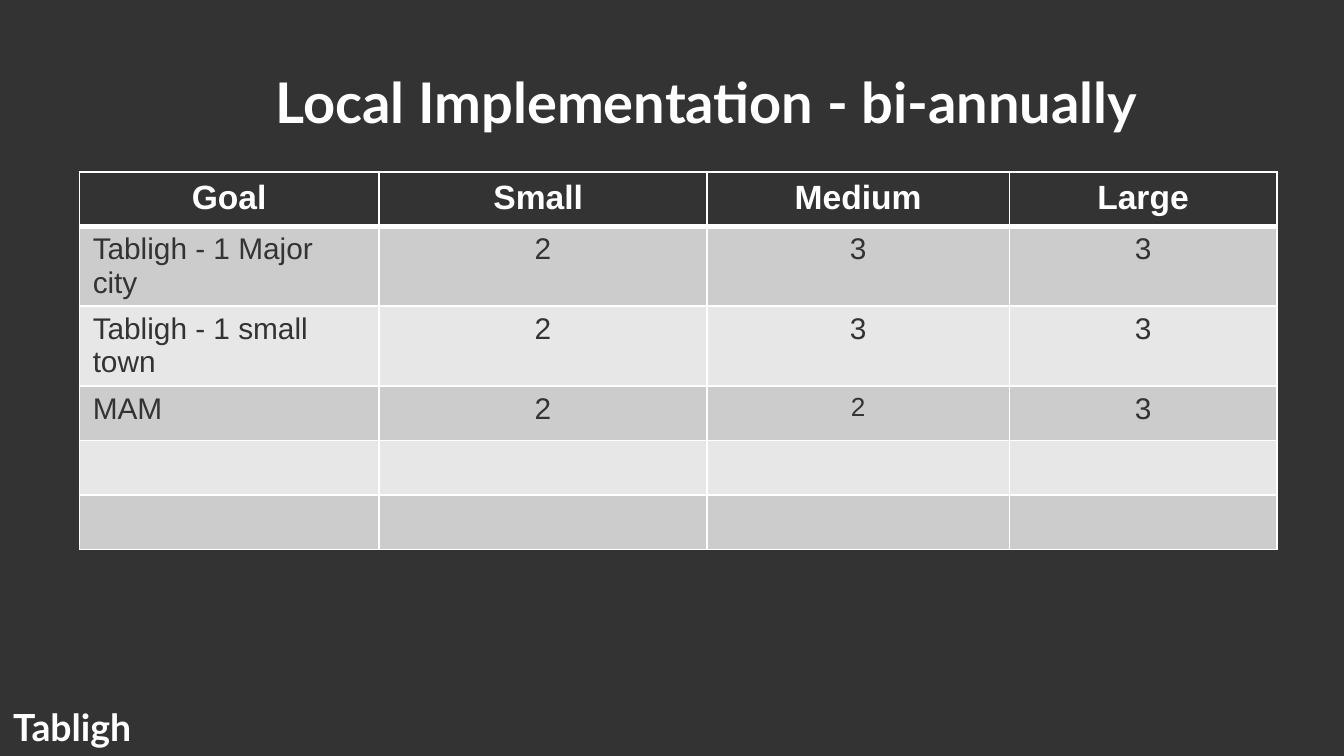
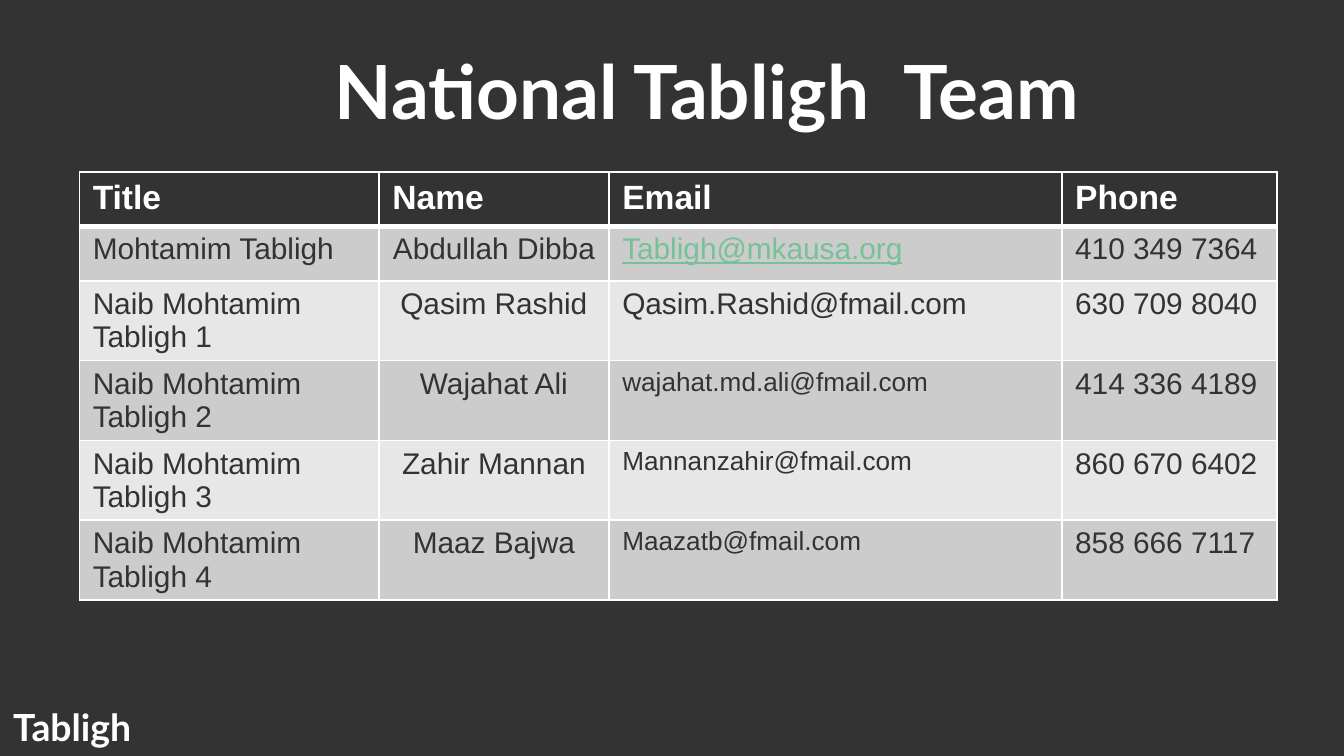
from lxml.etree import SubElement
from pptx import Presentation
from pptx.dml.color import RGBColor
from pptx.enum.text import MSO_ANCHOR, MSO_AUTO_SIZE, PP_ALIGN
from pptx.oxml.ns import qn
from pptx.util import Inches, Pt

COLORS = {
    "dark": "333333",
    "white": "FFFFFF",
    "band_odd": "CCCCCC",
    "band_even": "E7E7E7",
    "link": "77C197",
}
HEAD_FONT, BODY_FONT = "Lato", "Arial"
SLIDE_W = Inches(10)
SLIDE_H = SLIDE_W * 9 // 16
LEFT, CENTER = PP_ALIGN.LEFT, PP_ALIGN.CENTER

# Boxes as left, top, width, height in percent of the slide
TITLE_BOX = (16, 1.8, 73.2, 16.9)
FOOTER_BOX = (0, 91.5, 23.5, 8.5)
TABLE_BOX = (5.9, 22.75, 89.1, 43.2)

GOALS = [
    ["Goal", "Small ", "Medium", "Large"],
    ["Tabligh - 1 Major city", "2", "3", "3"],
    ["Tabligh - 1 small town", "2", "3", "3"],
    ["MAM", "2", "2", "3"],
    [""] * 4,
    [""] * 4,
]
TEAM = [
    ["Title", "Name", "Email", "Phone"],
    ["Mohtamim Tabligh", "Abdullah Dibba ", "Tabligh@mkausa.org", "410 349 7364"],
    ["Naib Mohtamim Tabligh 1", "Qasim Rashid", "Qasim.Rashid@fmail.com", "630 709 8040"],
    ["Naib Mohtamim Tabligh 2", "Wajahat Ali", "wajahat.md.ali@fmail.com", "414 336 4189"],
    ["Naib Mohtamim Tabligh 3", "Zahir Mannan", "Mannanzahir@fmail.com", "860 670 6402"],
    ["Naib Mohtamim Tabligh 4", "Maaz Bajwa", "Maazatb@fmail.com", "858 666 7117"],
]


def rgb(name):
    return RGBColor.from_string(COLORS[name])


def to_emu(box):
    sides = (SLIDE_W, SLIDE_H, SLIDE_W, SLIDE_H)
    return [round(share * side / 100) for share, side in zip(box, sides)]


def style_runs(p, size, color, font, bold=False):
    for r in p.runs:
        r.font.name, r.font.size, r.font.bold = font, Pt(size), bold
        r.font.color.rgb = rgb(color)


def write_heading(sp, text, size, align):
    """Bold white text resting on the bottom of its box."""
    tf = sp.text_frame
    tf.text = text
    tf.word_wrap = True
    tf.auto_size = MSO_AUTO_SIZE.NONE
    tf.vertical_anchor = MSO_ANCHOR.BOTTOM
    tf.paragraphs[0].alignment = align
    style_runs(tf.paragraphs[0], size, "white", HEAD_FONT, True)


def add_base_slide(prs, title, title_size):
    s = prs.slides.add_slide(prs.slide_layouts[5])
    sp = s.shapes.title
    sp.left, sp.top, sp.width, sp.height = to_emu(TITLE_BOX)
    write_heading(sp, title, title_size, CENTER)
    write_heading(s.shapes.add_textbox(*to_emu(FOOTER_BOX)), "Tabligh", 20, LEFT)
    return s


def set_borders(cell, top, bottom):
    tc_pr = cell._tc.get_or_add_tcPr()
    for side, width in (("L", 1), ("R", 1), ("T", top), ("B", bottom)):
        ln = SubElement(tc_pr, qn(f"a:ln{side}"), w=str(Pt(width)))
        fill = SubElement(ln, qn("a:solidFill"))
        SubElement(fill, qn("a:srgbClr"), val=COLORS["white"])


def add_banded_table(s, box, rows, col_widths, head_aligns, body_aligns, small_cells):
    x, y, w, h = to_emu(box)
    table = s.shapes.add_table(len(rows), len(col_widths), x, y, w, h).table
    for col, width in zip(table.columns, col_widths):
        col.width = round(w * width / sum(col_widths))

    for i, row in enumerate(rows):
        head = i == 0
        aligns = head_aligns if head else body_aligns
        band = "dark" if head else "band_odd" if i % 2 else "band_even"
        for j, text in enumerate(row):
            cell = table.cell(i, j)
            set_borders(cell, 3 if i == 1 else 1, 3 if head else 1)
            cell.fill.solid()
            cell.fill.fore_color.rgb = rgb(band)
            cell.text_frame.text = text
            p = cell.text_frame.paragraphs[0]
            p.alignment = aligns[j]
            size = 18 if head else 14 if (i, j) in small_cells else 16
            style_runs(p, size, "white" if head else "dark", BODY_FONT, head)
    return table


def add_goals_slide(prs):
    s = add_base_slide(prs, "Local Implementation - bi-annually", 30)
    add_banded_table(s, TABLE_BOX, GOALS, (2.23, 2.44, 2.25, 1.99),
                     [CENTER] * 4, [LEFT] + [CENTER] * 3, {(3, 2)})


def add_team_slide(prs):
    s = add_base_slide(prs, "National Tabligh  Team", 40)
    table = add_banded_table(s, TABLE_BOX, TEAM, (2.23, 1.71, 3.37, 1.6),
                             [LEFT] * 4, [LEFT, CENTER, LEFT, LEFT],
                             {(3, 2), (4, 2), (5, 2)})
    # The team's shared address looks like a link
    r = table.cell(1, 2).text_frame.paragraphs[0].runs[0]
    r.font.color.rgb = rgb("link")
    r.font.underline = True


def main():
    prs = Presentation()
    prs.slide_width, prs.slide_height = SLIDE_W, SLIDE_H
    background = prs.slide_master.background.fill
    background.solid()
    background.fore_color.rgb = rgb("dark")
    add_goals_slide(prs)
    add_team_slide(prs)
    prs.save("out.pptx")


if __name__ == "__main__":
    main()
